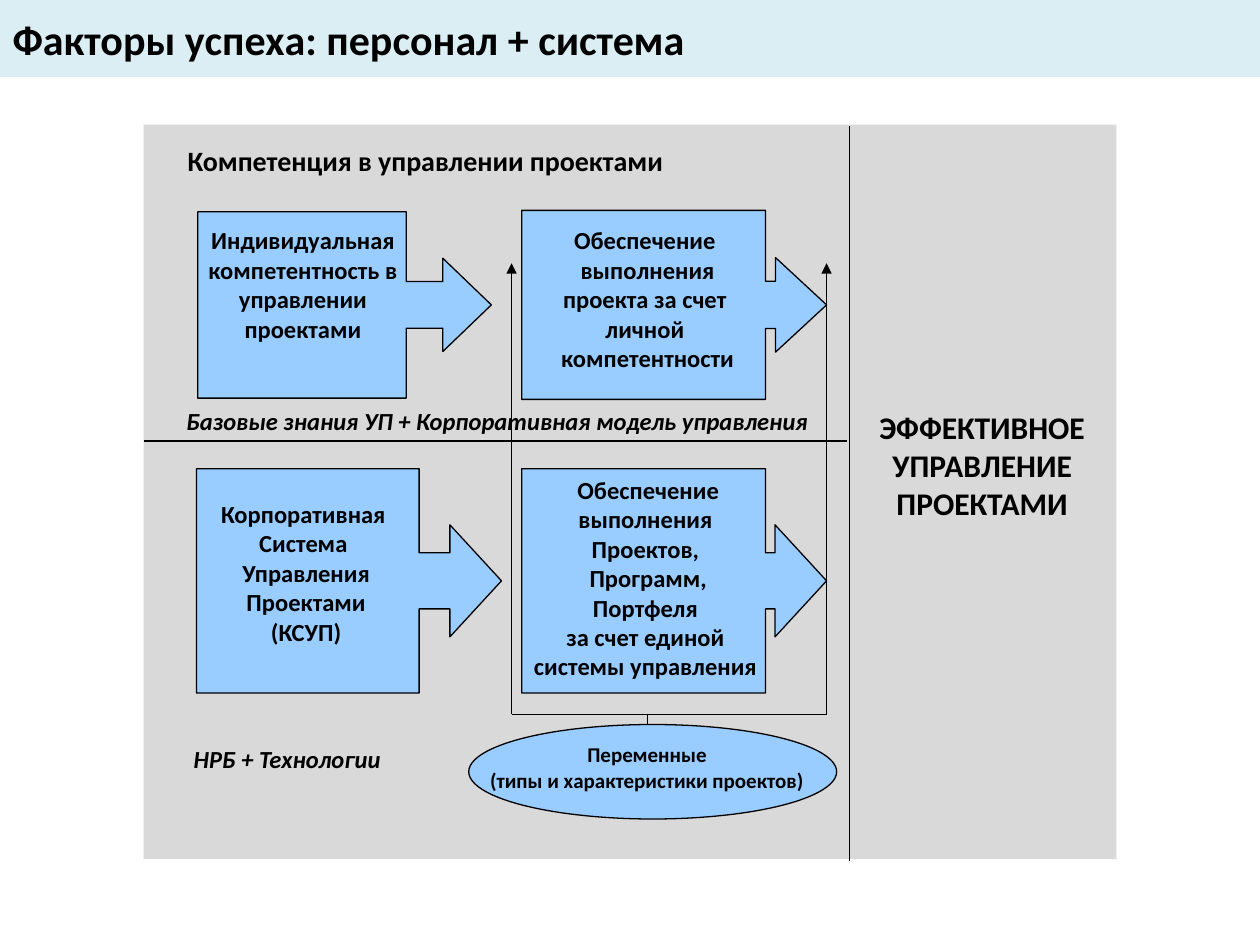
"""Build the slide on project success factors: people plus system."""
from dataclasses import dataclass

import lxml.etree
import pptx
import pptx.dml.color
import pptx.enum.shapes
import pptx.enum.text
import pptx.oxml.ns
import pptx.util

Inches = pptx.util.Inches
Pt = pptx.util.Pt
Shape = pptx.enum.shapes.MSO_SHAPE
Align = pptx.enum.text.PP_ALIGN
qn = pptx.oxml.ns.qn


@dataclass(frozen=True)
class Theme:
    font: str = "Calibri"
    ink: str = "000000"
    banner: str = "DBEEF4"
    panel: str = "D9D9D9"
    box: str = "99CCFF"
    title: int = 24
    result: int = 18
    heading: int = 16
    body: int = 14
    small: int = 12
    line: float = 0.75


theme = Theme()


def color(value):
    return pptx.dml.color.RGBColor.from_string(value)


def write(frame, lines, size, alignment, italic=False):
    frame.auto_size = pptx.enum.text.MSO_AUTO_SIZE.NONE
    for index, line in enumerate(lines):
        paragraph = frame.paragraphs[0] if index == 0 else frame.add_paragraph()
        paragraph.alignment = alignment
        run = paragraph.add_run()
        run.text = line
        run.font.name = theme.font
        run.font.size = Pt(size)
        run.font.bold = True
        run.font.italic = italic
        run.font.color.rgb = color(theme.ink)


presentation = pptx.Presentation()
presentation.slide_width = Inches(10)
presentation.slide_height = Inches(7.5)
slide = presentation.slides.add_slide(presentation.slide_layouts[5])

title = slide.shapes.title
title.left, title.top = Inches(0), Inches(0)
title.width, title.height = Inches(10), Inches(0.61)
title.fill.solid()
title.fill.fore_color.rgb = color(theme.banner)
title.text_frame.vertical_anchor = pptx.enum.text.MSO_ANCHOR.MIDDLE
write(title.text_frame, ["Факторы успеха: персонал + система"], theme.title, Align.LEFT)

callout = Shape.RIGHT_ARROW_CALLOUT
shapes = [
    (Shape.RECTANGLE, (1.14, 0.99, 7.72, 5.83), theme.panel, ()),
    (callout, (1.57, 1.68, 2.33, 1.48), theme.box, (0.25, 0.25, 0.26, 0.71)),
    (callout, (4.14, 1.67, 2.42, 1.5), theme.box, (0.25, 0.25, 0.27, 0.8)),
    (callout, (1.56, 3.72, 2.42, 1.78), theme.box, (0.25, 0.25, 0.23, 0.73)),
    (callout, (4.14, 3.72, 2.42, 1.78), theme.box, (0.25, 0.25, 0.23, 0.8)),
    (Shape.OVAL, (3.72, 5.75, 2.92, 0.75), theme.box, ()),
]
for kind, bounds, fill, adjustments in shapes:
    shape = slide.shapes.add_shape(kind, *map(Inches, bounds))
    shape.shadow.inherit = False
    shape.fill.solid()
    shape.fill.fore_color.rgb = color(fill)
    if fill == theme.panel:
        shape.line.fill.background()
    else:
        shape.line.color.rgb = color(theme.ink)
        shape.line.width = Pt(theme.line)
    for index, value in enumerate(adjustments):
        shape.adjustments[index] = value

texts = [
    ((6.87, 3.19, 1.85, 1.01), ["ЭФФЕКТИВНОЕ", "УПРАВЛЕНИЕ", "ПРОЕКТАМИ"],
     theme.result, Align.CENTER, False),
    ((1.39, 1.09, 4.15, 0.37), ["Компетенция в управлении проектами"],
     theme.heading, Align.LEFT, False),
    ((1.43, 5.86, 1.7, 0.34), ["НРБ + Технологии"], theme.body, Align.CENTER, True),
    ((1.54, 1.74, 1.73, 1.04),
     ["Индивидуальная", "компетентность в", "управлении", "проектами"],
     theme.body, Align.CENTER, False),
    ((4.35, 1.74, 1.58, 1.28),
     ["Обеспечение ", "выполнения", "проекта за счет ", "личной ", "компетентности"],
     theme.body, Align.CENTER, False),
    ((1.38, 3.17, 5.15, 0.33), ["Базовые знания УП + Корпоративная модель управления"],
     theme.body, Align.LEFT, True),
    ((1.65, 3.91, 1.56, 1.51),
     ["Корпоративная ", "Система ", "Управления", "Проектами", "(КСУП)"],
     theme.body, Align.CENTER, False),
    ((4.11, 3.72, 2.07, 1.99),
     ["Обеспечение", "выполнения ", "Проектов, ", "Программ,", "Портфеля ",
      "за счет единой ", "системы управления "],
     theme.body, Align.CENTER, False),
    ((3.78, 5.84, 2.71, 0.5), ["Переменные", "(типы и характеристики проектов)"],
     theme.small, Align.CENTER, False),
]
for bounds, lines, size, alignment, italic in texts:
    text_box = slide.shapes.add_textbox(*map(Inches, bounds))
    text_box.text_frame.word_wrap = False
    write(text_box.text_frame, lines, size, alignment, italic)

connectors = [
    (1.14, 3.5, 6.72, 3.5, False),
    (4.06, 5.67, 6.56, 5.67, False),
    (4.06, 5.67, 4.06, 2.09, True),
    (6.56, 5.67, 6.56, 2.09, True),
    (5.14, 5.67, 5.14, 5.75, False),
    (6.74, 1, 6.74, 6.83, False),
]
for *ends, has_arrow in connectors:
    connector = slide.shapes.add_connector(
        pptx.enum.shapes.MSO_CONNECTOR.STRAIGHT, *map(Inches, ends))
    connector.line.color.rgb = color(theme.ink)
    connector.line.width = Pt(theme.line)
    properties = connector._element.spPr
    if has_arrow:
        lxml.etree.SubElement(properties.find(qn("a:ln")), qn("a:tailEnd"), type="triangle")
    lxml.etree.SubElement(properties, qn("a:effectLst"))

presentation.save("out.pptx")
